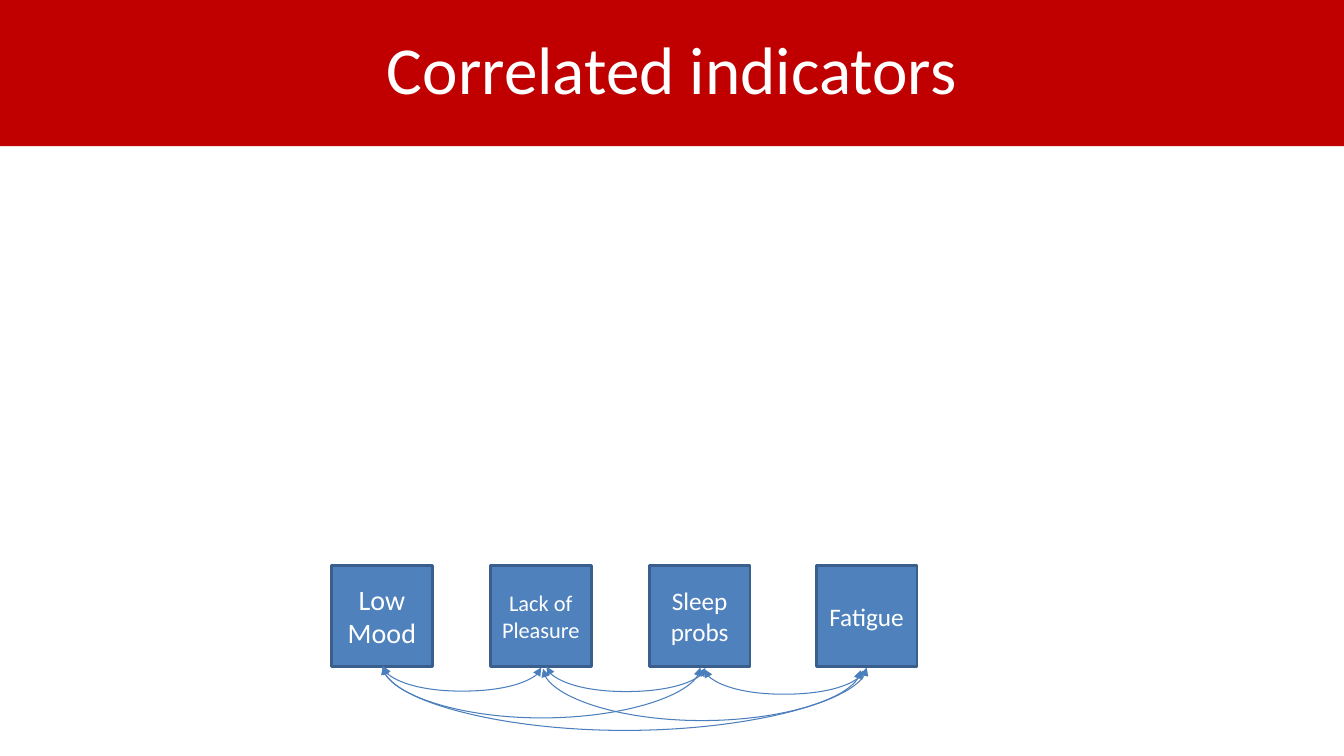
from dataclasses import dataclass

from lxml.etree import SubElement
from pptx import Presentation
from pptx.dml.color import RGBColor
from pptx.enum.shapes import MSO_CONNECTOR, MSO_SHAPE
from pptx.enum.text import MSO_ANCHOR, PP_ALIGN
from pptx.oxml.ns import qn
from pptx.util import Pt


@dataclass(frozen=True)
class Theme:
    font: str = "Calibri"
    banner: RGBColor = RGBColor(0xC0, 0x00, 0x00)
    box: RGBColor = RGBColor(0x4F, 0x81, 0xBD)
    outline: RGBColor = RGBColor(0x3A, 0x5F, 0x8C)
    arc: RGBColor = RGBColor(0x4B, 0x7E, 0xBC)
    text: RGBColor = RGBColor(0xFF, 0xFF, 0xFF)
    title_size: int = 48
    large: int = 20
    medium: int = 18
    small: int = 16


THEME = Theme()
SLIDE_WIDTH, SLIDE_HEIGHT = 960, 540
BANNER_HEIGHT = 104.4
BOX_TOP, BOX_SIZE = 404, 72
INDICATORS = [
    ("Low Mood", 236.8, THEME.large),
    ("Lack of Pleasure", 350.3, THEME.small),
    ("Sleep probs", 463.8, THEME.medium),
    ("Fatigue", 583, THEME.medium),
]
NEAR, FAR, FARTHEST = 18, 37.29, 46.29
CORRELATIONS = [
    (273.5, 386.6, 476.3, NEAR),
    (390.4, 503.8, 476.6, NEAR),
    (503.2, 616.6, 478.5, NEAR),
    (273.5, 500.3, 476.3, FAR),
    (387.9, 614.7, 478.2, FAR),
    (273.5, 619.1, 476.3, FARTHEST),
]


def add_block(slide, text, left, top, width, height, fill, size):
    shape = slide.shapes.add_shape(
        MSO_SHAPE.RECTANGLE, Pt(left), Pt(top), Pt(width), Pt(height))
    shape.shadow.inherit = False
    shape.fill.solid()
    shape.fill.fore_color.rgb = fill
    shape.line.fill.background()
    frame = shape.text_frame
    frame.word_wrap = True
    frame.vertical_anchor = MSO_ANCHOR.MIDDLE
    paragraph = frame.paragraphs[0]
    paragraph.text = text
    paragraph.alignment = PP_ALIGN.CENTER
    paragraph.font.name = THEME.font
    paragraph.font.size = Pt(size)
    paragraph.font.color.rgb = THEME.text
    return shape


def add_title(slide, text):
    banner = add_block(slide, text, 0, 0, SLIDE_WIDTH, BANNER_HEIGHT,
                       THEME.banner, THEME.title_size)
    banner.text_frame.paragraphs[0].line_spacing = 0.9


def add_indicator(slide, text, left, size):
    box = add_block(slide, text, left, BOX_TOP, BOX_SIZE, BOX_SIZE,
                    THEME.box, size)
    box.line.color.rgb = THEME.outline
    box.line.width = Pt(2)


def add_correlation(slide, start, end, level, depth):
    middle, half_span = (start + end) / 2, (end - start) / 2
    arc = slide.shapes.add_connector(
        MSO_CONNECTOR.CURVE,
        Pt(middle - 0.5), Pt(level - half_span),
        Pt(middle + 0.5), Pt(level + half_span))
    arc.line.color.rgb = THEME.arc
    arc.line.width = Pt(0.75)
    properties = arc._element.spPr
    transform = properties.find(qn("a:xfrm"))
    transform.set("rot", "16200000")
    transform.set("flipH", "1")
    adjustments = properties.find(qn("a:prstGeom")).find(qn("a:avLst"))
    SubElement(adjustments, qn("a:gd"), name="adj1",
               fmla=f"val {round(depth * 100000)}")
    outline = properties.find(qn("a:ln"))
    for arrowhead in ("a:headEnd", "a:tailEnd"):
        SubElement(outline, qn(arrowhead), type="triangle")
    SubElement(properties, qn("a:effectLst"))


def main():
    presentation = Presentation()
    presentation.slide_width = Pt(SLIDE_WIDTH)
    presentation.slide_height = Pt(SLIDE_HEIGHT)
    slide = presentation.slides.add_slide(presentation.slide_layouts[6])
    add_title(slide, "Correlated indicators")
    for text, left, size in INDICATORS:
        add_indicator(slide, text, left, size)
    for start, end, level, depth in CORRELATIONS:
        add_correlation(slide, start, end, level, depth)
    presentation.save("out.pptx")


if __name__ == "__main__":
    main()
